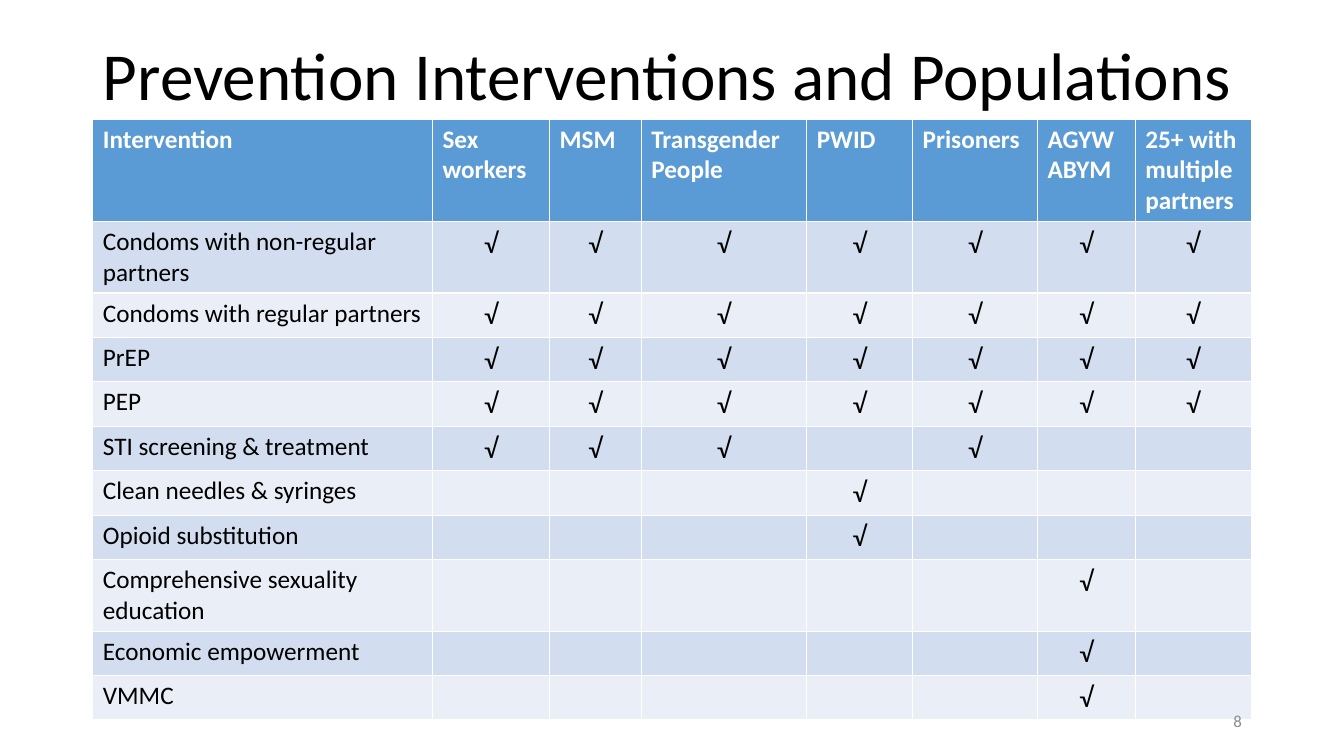
from pptx import Presentation
from pptx.dml.color import RGBColor
from pptx.enum.text import MSO_ANCHOR, MSO_AUTO_SIZE, PP_ALIGN
from pptx.util import Cm, Pt

LEFT, CENTER, RIGHT = PP_ALIGN.LEFT, PP_ALIGN.CENTER, PP_ALIGN.RIGHT
MIDDLE = MSO_ANCHOR.MIDDLE
NO_AUTOFIT = MSO_AUTO_SIZE.NONE
TITLE_ONLY = 5

FONT = "Calibri"
BLACK, WHITE, GREY = "000000", "FFFFFF", "8C8C8C"
HEADER_FILL = "5B9BD5"
BAND_FILLS = ("D2DEEF", "EAEFF7")

MARGIN, CONTENT_WIDTH = 2.34, 29.21
COLUMN_WIDTHS = (8.56, 2.95, 2.31, 4.17, 2.67, 3.15, 2.46, 2.92)
ROW_HEIGHT = 1.04
CHECK = "√"

HEADERS = ("Intervention", "Sex workers", "MSM", "Transgender People", "PWID",
           "Prisoners", "AGYW\nABYM", "25+ with multiple partners")
ALL_POPULATIONS = HEADERS[1:]
YOUNG_PEOPLE = ("AGYW\nABYM",)
INTERVENTIONS = (
    ("Condoms with non-regular partners", ALL_POPULATIONS),
    ("Condoms with regular partners", ALL_POPULATIONS),
    ("PrEP", ALL_POPULATIONS),
    ("PEP", ALL_POPULATIONS),
    ("STI screening & treatment",
     ("Sex workers", "MSM", "Transgender People", "Prisoners")),
    ("Clean needles & syringes", ("PWID",)),
    ("Opioid substitution", ("PWID",)),
    ("Comprehensive sexuality education", YOUNG_PEOPLE),
    ("Economic empowerment", YOUNG_PEOPLE),
    ("VMMC", YOUNG_PEOPLE),
)


def color(hex_string):
    return RGBColor.from_string(hex_string)


def write(text_frame, text, size, hex_color, alignment=LEFT, bold=False):
    text_frame.text = text
    for paragraph in text_frame.paragraphs:
        paragraph.alignment = alignment
        font = paragraph.font
        font.name, font.size, font.bold = FONT, Pt(size), bold
        font.color.rgb = color(hex_color)


def set_title(slide, text):
    title = slide.shapes.title
    title.left, title.top = Cm(MARGIN), Cm(0.71)
    title.width, title.height = Cm(CONTENT_WIDTH), Cm(2.54)
    text_frame = title.text_frame
    write(text_frame, text, 48, BLACK)
    text_frame.auto_size = NO_AUTOFIT
    text_frame.vertical_anchor = MIDDLE
    text_frame.paragraphs[0].line_spacing = 0.9


def fill_cell(cell, hex_fill):
    cell.fill.solid()
    cell.fill.fore_color.rgb = color(hex_fill)


def add_intervention_table(slide):
    frame = slide.shapes.add_table(
        len(INTERVENTIONS) + 1, len(HEADERS),
        Cm(MARGIN), Cm(3), Cm(CONTENT_WIDTH), Cm(14.91))
    table = frame.table
    for column, width in zip(table.columns, COLUMN_WIDTHS):
        column.width = Cm(width)
    for row in table.rows:
        row.height = Cm(ROW_HEIGHT)

    for cell, header in zip(table.rows[0].cells, HEADERS):
        fill_cell(cell, HEADER_FILL)
        write(cell.text_frame, header, 18, WHITE, bold=True)

    for index, (intervention, populations) in enumerate(INTERVENTIONS):
        for column, header in enumerate(HEADERS):
            cell = table.cell(index + 1, column)
            fill_cell(cell, BAND_FILLS[index % 2])
            if column == 0:
                write(cell.text_frame, intervention, 18, BLACK)
            elif header in populations:
                write(cell.text_frame, CHECK, 20, BLACK, CENTER)


def add_slide_number(slide, number):
    text_box = slide.shapes.add_textbox(Cm(23.93), Cm(17.65), Cm(7.62), Cm(1.02))
    text_frame = text_box.text_frame
    text_frame.word_wrap = True
    text_frame.vertical_anchor = MIDDLE
    write(text_frame, number, 12, GREY, RIGHT)


def main():
    presentation = Presentation()
    presentation.slide_width, presentation.slide_height = Cm(33.87), Cm(19.05)
    slide = presentation.slides.add_slide(presentation.slide_layouts[TITLE_ONLY])
    set_title(slide, "Prevention Interventions and Populations")
    add_intervention_table(slide)
    add_slide_number(slide, "8")
    presentation.save("out.pptx")


if __name__ == "__main__":
    main()
